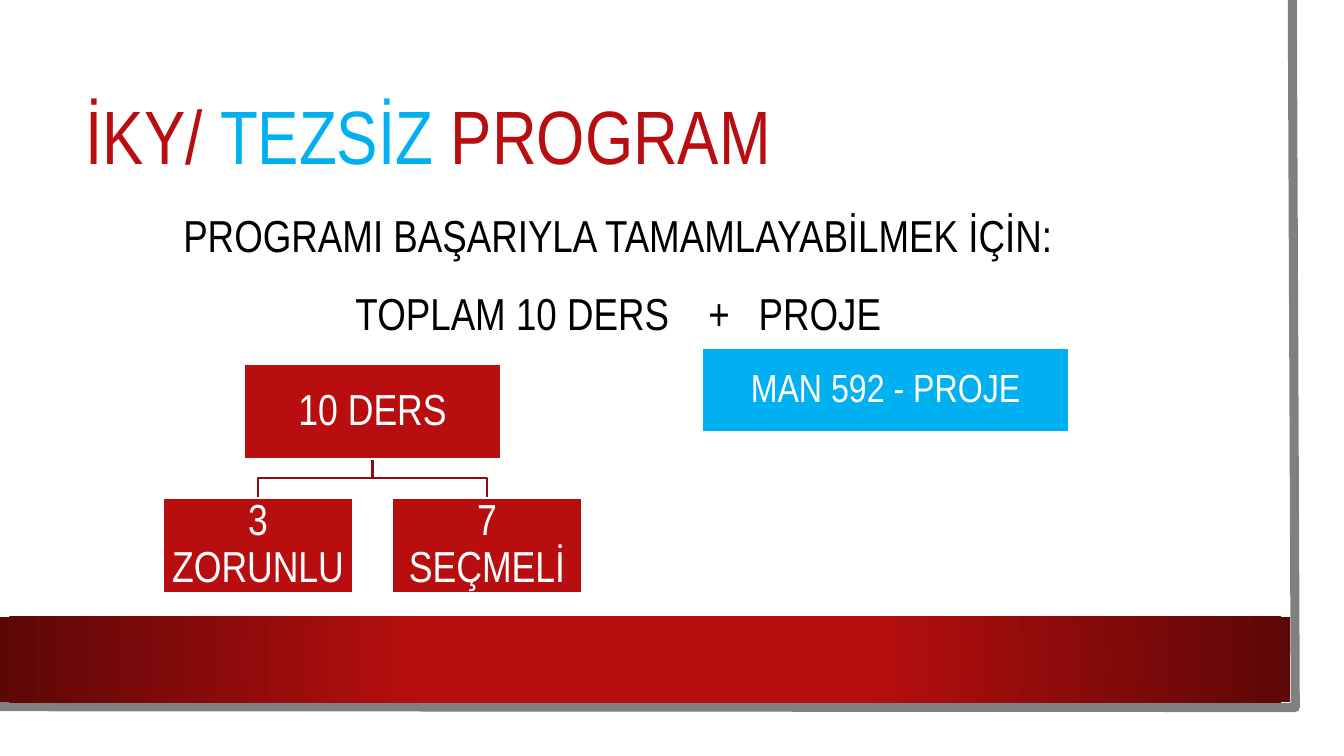
from dataclasses import dataclass

from lxml.etree import SubElement
from pptx import Presentation
from pptx.dml.color import RGBColor
from pptx.enum.shapes import MSO_SHAPE
from pptx.enum.text import MSO_ANCHOR, MSO_AUTO_SIZE, PP_ALIGN
from pptx.oxml import parse_xml
from pptx.oxml.ns import nsdecls, qn
from pptx.util import Pt


@dataclass(frozen=True)
class Theme:
    font: str = "Arial Narrow"
    red: str = "B80E0F"
    dark_red: str = "5C0707"
    branch_red: str = "930B0C"
    blue: str = "00B0F0"
    gray: str = "808080"
    white: str = "FFFFFF"
    black: str = "000000"
    title_size: float = 54
    body_size: float = 32
    tree_size: float = 31
    project_size: float = 28
    outline: float = 1.5


THEME = Theme()


def color(value):
    return RGBColor.from_string(value)


def place(shape, box):
    shape.left, shape.top, shape.width, shape.height = (Pt(length) for length in box)


def add_run(paragraph, text, size, ink):
    run = paragraph.add_run()
    run.text = text
    run.font.name = THEME.font
    run.font.size = Pt(size)
    run.font.color.rgb = color(ink)


def add_rectangle(slide, box):
    shape = slide.shapes.add_shape(MSO_SHAPE.RECTANGLE, *(Pt(length) for length in box))
    shape.shadow.inherit = False
    shape.line.fill.background()
    return shape


def add_open_line(slide, points, ink, width):
    start, *rest = [(Pt(x), Pt(y)) for x, y in points]
    builder = slide.shapes.build_freeform(*start)
    builder.add_line_segments(rest, close=False)
    shape = builder.convert_to_shape()
    shape.shadow.inherit = False
    shape.fill.background()
    shape.line.color.rgb = color(ink)
    shape.line.width = Pt(width)


def add_label_box(slide, box, text, size, fill):
    shape = add_rectangle(slide, box)
    shape.fill.solid()
    shape.fill.fore_color.rgb = color(fill)
    shape.line.color.rgb = color(THEME.white)
    shape.line.width = Pt(THEME.outline)
    frame = shape.text_frame
    frame.word_wrap = True
    frame.vertical_anchor = MSO_ANCHOR.MIDDLE
    frame.margin_left = frame.margin_right = Pt(1.5)
    frame.margin_top = frame.margin_bottom = Pt(1.5)
    paragraph = frame.paragraphs[0]
    paragraph.alignment = PP_ALIGN.CENTER
    paragraph.line_spacing = 0.9
    add_run(paragraph, text, size, THEME.white)


def add_backdrop(slide, box):
    left, top, width, height = box
    right, bottom = left + width, top + height
    add_open_line(
        slide,
        [(right + 1.5, top), (right + 3.6, bottom + 3.6), (left - 2.2, bottom + 3)],
        THEME.gray,
        6.5,
    )
    band_height = 61.2
    band = add_rectangle(slide, (left, bottom - band_height, width, band_height))
    gradient = parse_xml(
        f'<a:gradFill {nsdecls("a")} rotWithShape="1"><a:gsLst>'
        f'<a:gs pos="34000"><a:srgbClr val="{THEME.red}"/></a:gs>'
        f'<a:gs pos="100000"><a:srgbClr val="{THEME.dark_red}"/></a:gs></a:gsLst>'
        '<a:path path="circle"><a:fillToRect l="50000" t="50000" r="50000" b="50000"/>'
        "</a:path></a:gradFill>"
    )
    band.element.spPr.find(qn("a:prstGeom")).addnext(gradient)


def add_title(slide, box):
    title = slide.shapes.title
    place(title, box)
    frame = title.text_frame
    frame.auto_size = MSO_AUTO_SIZE.NONE
    frame.vertical_anchor = MSO_ANCHOR.MIDDLE
    paragraph = frame.paragraphs[0]
    paragraph.alignment = PP_ALIGN.LEFT
    paragraph.line_spacing = 0.9
    for text, ink in (("İKY/ ", THEME.red), ("TEZSİZ", THEME.blue), (" PROGRAM", THEME.red)):
        add_run(paragraph, text, THEME.title_size, ink)


def add_requirements(slide, box):
    body = slide.placeholders[1]
    place(body, box)
    frame = body.text_frame
    frame.auto_size = MSO_AUTO_SIZE.NONE
    lines = ("PROGRAMI BAŞARIYLA TAMAMLAYABİLMEK İÇİN:", "TOPLAM 10 DERS\t+\tPROJE")
    for index, line in enumerate(lines):
        paragraph = frame.add_paragraph() if index else frame.paragraphs[0]
        properties = paragraph._p.get_or_add_pPr()
        properties.set("marL", "0")
        properties.set("indent", "0")
        SubElement(properties, qn("a:buNone"))
        tabs = SubElement(properties, qn("a:tabLst"))
        for position in (288, 360):
            SubElement(tabs, qn("a:tab"), pos=str(Pt(position)), algn="l")
        paragraph.alignment = PP_ALIGN.CENTER
        paragraph.line_spacing = 1.2
        paragraph.space_before = Pt(10 if index else 0)
        add_run(paragraph, line, THEME.body_size, THEME.black)


def add_course_tree(slide, box):
    left, top, width, height = box
    gap = 28
    root_width = 183
    child_width = (width - gap) / 2
    box_height = (height - gap) / 2
    center = left + width / 2
    root_bottom = top + box_height
    child_top = root_bottom + gap
    middle = root_bottom + gap / 2
    children = [
        (left + index * (child_width + gap), text)
        for index, text in enumerate(("3 ZORUNLU", "7 SEÇMELİ"))
    ]
    for child_left, _ in children:
        child_center = child_left + child_width / 2
        add_open_line(
            slide,
            [(center, root_bottom), (center, middle), (child_center, middle), (child_center, child_top)],
            THEME.branch_red,
            THEME.outline,
        )
    root_box = (center - root_width / 2, top, root_width, box_height)
    add_label_box(slide, root_box, "10 DERS", THEME.tree_size, THEME.red)
    for child_left, text in children:
        child_box = (child_left, child_top, child_width, box_height)
        add_label_box(slide, child_box, text, THEME.tree_size, THEME.red)


def add_project(slide, box):
    add_label_box(slide, box, "MAN 592 - PROJE", THEME.project_size, THEME.blue)


def main():
    presentation = Presentation()
    presentation.slide_width = Pt(960)
    presentation.slide_height = Pt(540)
    slide = presentation.slides.add_slide(presentation.slide_layouts[1])
    add_backdrop(slide, (0, 0, 921.6, 501.8))
    add_title(slide, (54, 54, 818.6, 91.4))
    add_requirements(slide, (54, 136.8, 775.4, 105.1))
    add_course_tree(slide, (116.6, 260, 299, 163.4))
    add_project(slide, (501.1, 248.4, 262.8, 60.5))
    presentation.save("out.pptx")


if __name__ == "__main__":
    main()
